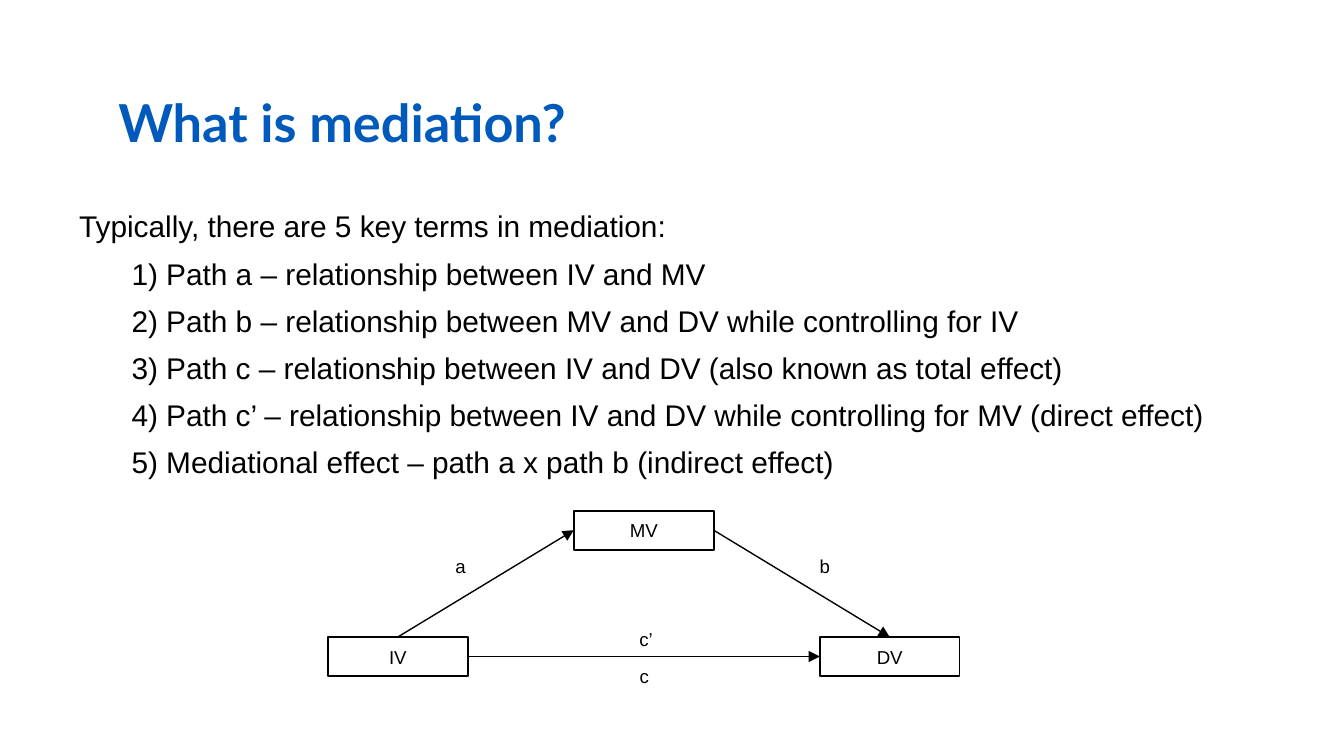
from pptx import Presentation
from pptx.dml.color import RGBColor
from pptx.enum.shapes import MSO_CONNECTOR, MSO_SHAPE
from pptx.enum.text import MSO_ANCHOR, MSO_AUTO_SIZE, PP_ALIGN
from pptx.oxml.ns import qn
from pptx.util import Inches, Pt
from lxml.etree import SubElement

COLORS = {"title": "005ABB", "ink": "000000", "paper": "FFFFFF"}

# Content
TITLE = "What is mediation?"
INTRO = "Typically, there are 5 key terms in mediation:"
TERMS = [
    "Path a – relationship between IV and MV",
    "Path b – relationship between MV and DV while controlling for IV",
    "Path c – relationship between IV and DV (also known as total effect)",
    "Path c’ – relationship between IV and DV while controlling for MV (direct effect)",
    "Mediational effect – path a x path b (indirect effect)",
]
VARIABLES = {"IV": (2.44, 4.74), "DV": (6.1, 4.74), "MV": (4.27, 3.8)}
VARIABLE_SIZE = (1.04, 0.29)
TOP, LEFT, RIGHT = 0, 1, 3  # connection sites of a rectangle
PATHS = [("IV", TOP, "MV", LEFT), ("MV", RIGHT, "DV", TOP), ("IV", RIGHT, "DV", LEFT)]
LABELS = [("a", 3.29, 4.08, 0.31), ("b", 6, 4.08, 0.31),
          ("c’", 4.66, 4.62, 0.4), ("c", 4.66, 4.9, 0.31)]

TITLE_FONT = {"name": "Lato", "size": Pt(28), "bold": True}
BODY_FONT = {"name": "Arial", "size": Pt(16)}
SMALL_FONT = {"name": "Arial", "size": Pt(10)}


def color(name):
    return RGBColor.from_string(COLORS[name])


def write(paragraph, text, font, ink="ink"):
    span = paragraph.add_run()
    span.text = text
    for key, value in font.items():
        setattr(span.font, key, value)
    span.font.color.rgb = color(ink)


def add_text_box(page, left, top, width, height):
    box = page.shapes.add_textbox(Inches(left), Inches(top), Inches(width), Inches(height))
    box.text_frame.word_wrap = True
    box.text_frame.auto_size = MSO_AUTO_SIZE.SHAPE_TO_FIT_TEXT
    return box.text_frame


def add_title(page):
    title = page.shapes.title
    title.left, title.top = Inches(0.78), Inches(0.59)
    title.width, title.height = Inches(8.44), Inches(0.63)
    frame = title.text_frame
    frame.auto_size = MSO_AUTO_SIZE.NONE
    frame.vertical_anchor = MSO_ANCHOR.MIDDLE
    for side in ("left", "top", "right", "bottom"):
        setattr(frame, f"margin_{side}", Inches(0.1))
    frame.paragraphs[0].alignment = PP_ALIGN.LEFT
    write(frame.paragraphs[0], TITLE, TITLE_FONT, "title")


def add_terms(page):
    frame = add_text_box(page, 0.49, 1.5, 9.08, 2.14)
    intro = frame.paragraphs[0]
    intro.space_after = Pt(6)
    write(intro, INTRO, BODY_FONT)
    for number, term in enumerate(TERMS, 1):
        paragraph = frame.add_paragraph()
        paragraph.level = 3
        paragraph.space_after = Pt(6)
        properties = paragraph._p.get_or_add_pPr()
        properties.set("marL", str(Inches(0.39)))
        properties.set("indent", "0")
        write(paragraph, f"{number}) {term}", BODY_FONT)


def add_variable(page, name, left, top):
    box = page.shapes.add_shape(MSO_SHAPE.RECTANGLE, Inches(left), Inches(top),
                                *map(Inches, VARIABLE_SIZE))
    box.shadow.inherit = False
    box.fill.solid()
    box.fill.fore_color.rgb = color("paper")
    box.line.color.rgb = color("ink")
    box.line.width = Pt(1)
    box.text_frame.vertical_anchor = MSO_ANCHOR.MIDDLE
    paragraph = box.text_frame.paragraphs[0]
    paragraph.alignment = PP_ALIGN.CENTER
    write(paragraph, name, SMALL_FONT)
    return box


def add_path(page, start, start_site, end, end_site):
    arrow = page.shapes.add_connector(MSO_CONNECTOR.STRAIGHT, 0, 0, 0, 0)
    arrow.begin_connect(start, start_site)
    arrow.end_connect(end, end_site)
    arrow.line.color.rgb = color("ink")
    arrow.line.width = Pt(0.75)
    SubElement(arrow.line._get_or_add_ln(), qn("a:tailEnd"), type="triangle")
    SubElement(arrow._element.spPr, qn("a:effectLst"))


def main():
    deck = Presentation()
    deck.slide_width = Inches(10)
    deck.slide_height = deck.slide_width * 9 // 16  # widescreen
    page = deck.slides.add_slide(deck.slide_layouts[5])

    add_title(page)
    add_terms(page)

    # Mediation diagram
    boxes = {name: add_variable(page, name, *place) for name, place in VARIABLES.items()}
    for start, start_site, end, end_site in PATHS:
        add_path(page, boxes[start], start_site, boxes[end], end_site)
    for text, left, top, width in LABELS:
        frame = add_text_box(page, left, top, width, 0.27)
        write(frame.paragraphs[0], text, SMALL_FONT)

    deck.save("out.pptx")


if __name__ == "__main__":
    main()
